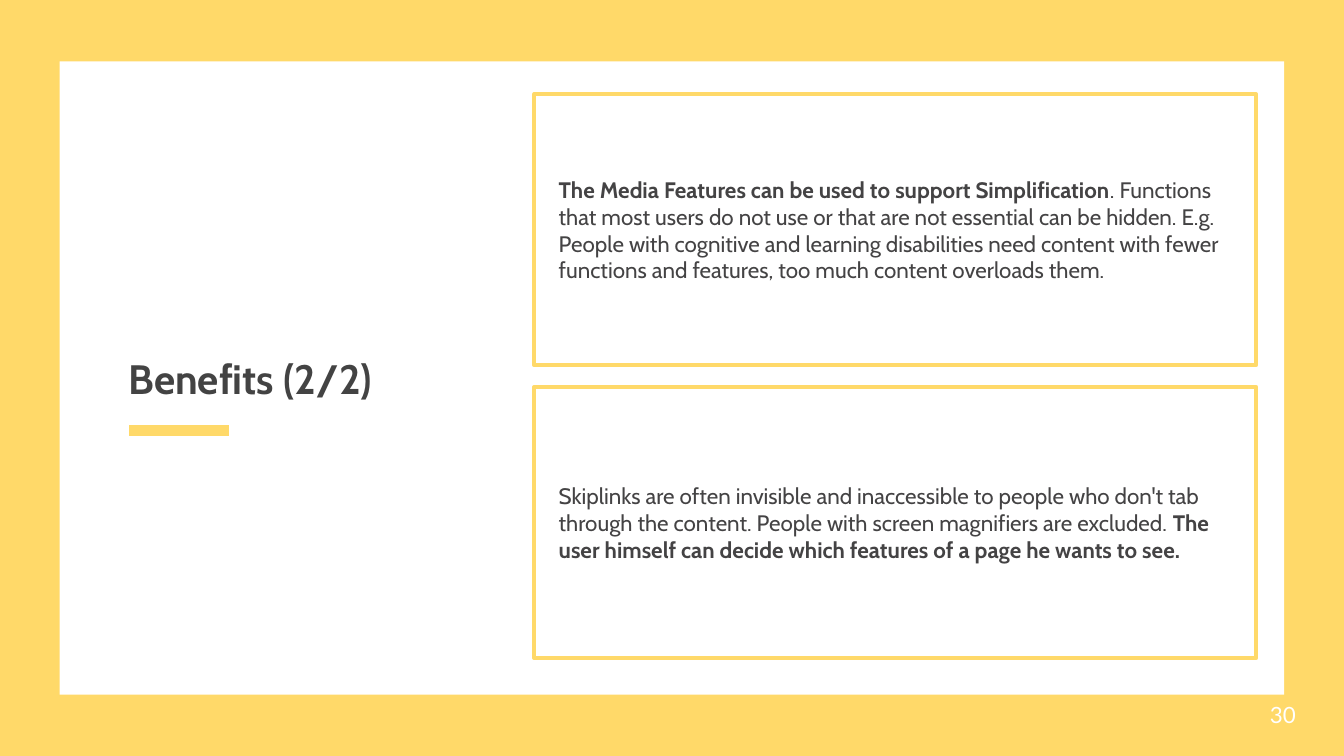
import pptx
import pptx.dml.color
import pptx.enum.shapes
import pptx.enum.text
import pptx.oxml.ns
import pptx.util
from lxml import etree
from pptx.util import Cm

YELLOW = pptx.dml.color.RGBColor(0xFF, 0xD9, 0x69)
WHITE = pptx.dml.color.RGBColor(0xFF, 0xFF, 0xFF)
TITLE_GREY = pptx.dml.color.RGBColor(0x43, 0x43, 0x43)
BODY_GREY = pptx.dml.color.RGBColor(0x44, 0x43, 0x44)

BENEFITS = [
    (
        4.19,
        [
            ("The Media Features can be used to support Simplification", True),
            (
                ". Functions that most users do not use or that are not essential can be "
                "hidden. E.g. People with cognitive and learning disabilities need content "
                "with fewer functions and features, too much content overloads them.",
                False,
            ),
        ],
    ),
    (
        2.31,
        [
            (
                "Skiplinks are often invisible and inaccessible to people who don't tab "
                "through the content. People with screen magnifiers are excluded. ",
                False,
            ),
            ("The user himself can decide which features of a page he wants to see.", True),
        ],
    ),
]


def add_rectangle(slide, left, top, width, height):
    """Add a shadowless rectangle with neither fill nor line, in centimetres."""
    rectangle = slide.shapes.add_shape(
        pptx.enum.shapes.MSO_SHAPE.RECTANGLE, Cm(left), Cm(top), Cm(width), Cm(height)
    )
    rectangle.shadow.inherit = False
    rectangle.fill.background()
    rectangle.line.fill.background()
    return rectangle


def write_text(frame, pieces, font, size, color):
    """Write (text, bold) pieces as one left-aligned, vertically centred paragraph."""
    frame.word_wrap = True
    frame.auto_size = pptx.enum.text.MSO_AUTO_SIZE.NONE
    frame.vertical_anchor = pptx.enum.text.MSO_ANCHOR.MIDDLE
    frame.margin_left = frame.margin_right = Cm(0.25)
    frame.margin_top = frame.margin_bottom = Cm(0.25)
    paragraph = frame.paragraphs[0]
    paragraph.alignment = pptx.enum.text.PP_ALIGN.LEFT
    for text, bold in pieces:
        run = paragraph.add_run()
        run.text = text
        run.font.name = font
        run.font.size = pptx.util.Pt(size)
        run.font.bold = bold
        run.font.color.rgb = color


def add_text(slide, left, top, width, height, pieces, font, color):
    """Add a 12 pt text box, in centimetres."""
    box = slide.shapes.add_textbox(Cm(left), Cm(top), Cm(width), Cm(height))
    write_text(box.text_frame, pieces, font, 12, color)


def add_background(slide, left, top, width, height):
    """Colour the slide and lay the white panel on it, behind the title."""
    slide.background.fill.solid()
    slide.background.fill.fore_color.rgb = YELLOW
    panel = add_rectangle(slide, left, top, width, height)
    panel.fill.solid()
    panel.fill.fore_color.rgb = WHITE
    slide.shapes.title._element.addprevious(panel._element)


def add_heading(slide, left, top, width, height):
    """Place the title and the accent rule beneath its text."""
    title = slide.shapes.title
    title.left, title.top = Cm(left), Cm(top)
    title.width, title.height = Cm(width), Cm(height)
    write_text(title.text_frame, [("Benefits (2/2)", True)], "Cabin", 22, TITLE_GREY)

    rule_left, rule_top = left + 0.26, top + 3.31
    rule = slide.shapes.add_connector(
        pptx.enum.shapes.MSO_CONNECTOR.STRAIGHT,
        Cm(rule_left), Cm(rule_top), Cm(rule_left + 1.88), Cm(rule_top),
    )
    rule.line.color.rgb = YELLOW
    rule.line.width = pptx.util.Pt(6)
    etree.SubElement(rule._element.spPr, pptx.oxml.ns.qn("a:effectLst"))


def add_benefits(slide, left, top, width, height, gap=0.41):
    """Stack outlined cards of equal height, each with its text centred inside."""
    card_height = (height - gap * (len(BENEFITS) - 1)) / len(BENEFITS)
    for index, (text_height, pieces) in enumerate(BENEFITS):
        card_top = top + index * (card_height + gap)
        card = add_rectangle(slide, left, card_top, width, card_height)
        card.line.color.rgb = YELLOW
        card.line.width = pptx.util.Pt(2.25)
        text_top = card_top + (card_height - text_height) / 2
        add_text(
            slide, left + 0.21, text_top, width - 0.5, text_height, pieces, "Cabin", BODY_GREY
        )


def main():
    """Build and save the benefits slide."""
    presentation = pptx.Presentation()
    presentation.slide_width, presentation.slide_height = Cm(25.4), Cm(14.29)
    slide = presentation.slides.add_slide(presentation.slide_layouts[5])
    add_background(slide, 1.13, 1.16, 23.14, 11.97)
    add_heading(slide, 2.18, 4.83, 7.06, 4.62)
    add_benefits(slide, 10.1, 1.78, 13.64, 10.66)
    add_text(slide, 23.75, 12.96, 1.52, 1.09, [("30", False)], "Lato", WHITE)
    presentation.save("out.pptx")


if __name__ == "__main__":
    main()
